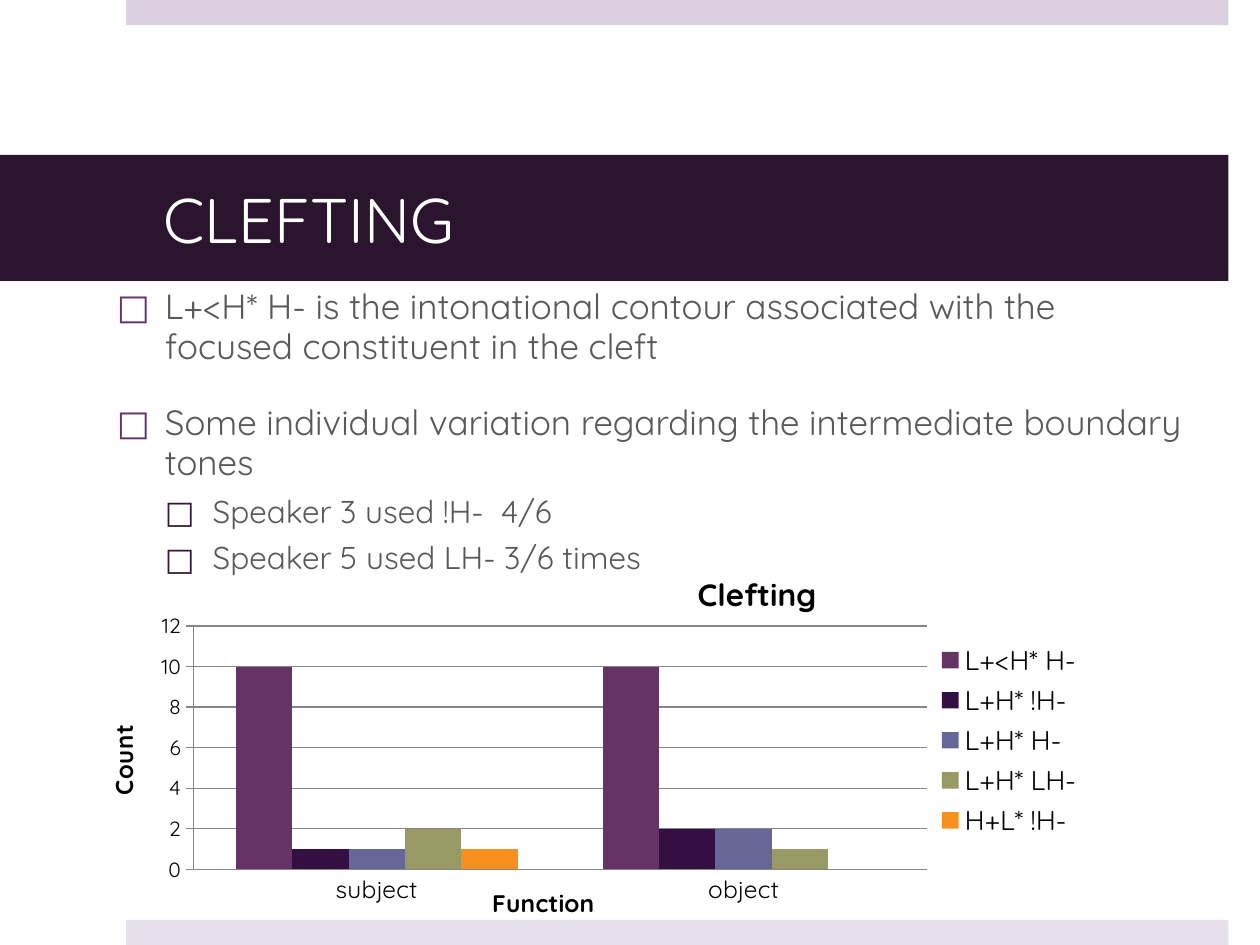
from lxml import etree
from pptx import Presentation
from pptx import util as u
from pptx.chart.data import CategoryChartData
from pptx.dml.color import RGBColor
from pptx.enum import chart as ch, shapes, text
from pptx.oxml.ns import qn

FONT = "Quicksand"
WIDTH, HEIGHT = 10, 7.5
BAND_LEFT, BAND_WIDTH, BAND_HEIGHT = 1, 8.75, 0.2

WHITE = RGBColor(0xFF, 0xFF, 0xFF)
BLACK = RGBColor(0, 0, 0)
GRAY = RGBColor(0x59, 0x59, 0x59)
GRID = RGBColor(0x86, 0x86, 0x86)
PLUM = RGBColor(0x2B, 0x14, 0x2D)
TOP_BAND = RGBColor(0xDB, 0xCF, 0xE0)
BOTTOM_BAND = RGBColor(0xE7, 0xDF, 0xEB)
BULLETS = ["663366", "331A33"]

# Text, level
POINTS = [
    ("L+<H* H- is the intonational contour associated with the "
     "focused constituent in the cleft", 0),
    ("Some individual variation regarding the intermediate boundary tones", 0),
    ("Speaker 3 used !H-  4/6", 1),
    ("Speaker 5 used LH- 3/6 times", 1),
]

# Contour, counts for subject and object, colour
CONTOURS = [
    ("L+<H* H-", (10, 10), RGBColor(0x66, 0x33, 0x66)),
    ("L+H* !H-", (1, 2), RGBColor(0x33, 0x0F, 0x42)),
    ("L+H* H-", (1, 2), RGBColor(0x66, 0x66, 0x99)),
    ("L+H* LH-", (2, 1), RGBColor(0x99, 0x99, 0x66)),
    ("H+L* !H-", (1, None), RGBColor(0xF7, 0x90, 0x1E)),
]


def inches(*lengths):
    return [u.Inches(n) for n in lengths]


def style_font(font, size, color, bold=False):
    font.name, font.size, font.bold = FONT, u.Pt(size), bold
    font.color.rgb = color


def add_run(p, words, size, color, bold=False):
    r = p.add_run()
    r.text = words
    style_font(r.font, size, color, bold)


def add_band(s, top, color):
    sp = s.shapes.add_shape(shapes.MSO_SHAPE.RECTANGLE,
                            *inches(BAND_LEFT, top, BAND_WIDTH, BAND_HEIGHT))
    sp.shadow.inherit = False
    sp.fill.solid()
    sp.fill.fore_color.rgb = color
    sp.line.fill.background()


def add_title(s, words):
    sp = s.shapes.title
    sp.left, sp.top, sp.width, sp.height = inches(0, 1.23, 9.75, 1)
    sp.fill.solid()
    sp.fill.fore_color.rgb = PLUM
    tf = sp.text_frame
    tf.margin_left, tf.margin_right = inches(1.3, 0.3)
    tf.vertical_anchor = text.MSO_ANCHOR.MIDDLE
    p = tf.paragraphs[0]
    p.alignment = text.PP_ALIGN.LEFT
    add_run(p, words, 36, WHITE)


def set_bullet(p, level):
    pPr = p._p.get_or_add_pPr()
    pPr.set("marL", str(u.Inches(0.38 * (level + 1))))
    pPr.set("indent", str(u.Inches(-0.38)))
    color = etree.SubElement(pPr, qn("a:buClr"))
    etree.SubElement(color, qn("a:srgbClr"), val=BULLETS[level])
    etree.SubElement(pPr, qn("a:buFont"), typeface=FONT)
    etree.SubElement(pPr, qn("a:buChar"), char="□")


def add_points(s):
    tf = s.shapes.add_textbox(*inches(0.83, 2.23, 8.71, 2.52)).text_frame
    tf.word_wrap = True
    for i, (words, level) in enumerate(POINTS):
        p = tf.paragraphs[0] if i == 0 else tf.add_paragraph()
        p.level = level
        p.line_spacing = 0.96
        p.space_before = u.Pt(0 if i == 0 else (20, 6)[level])
        set_bullet(p, level)
        add_run(p, words, (20, 18)[level], GRAY)


def place(element, x, y, w=None, h=None, inner=False):
    """Fix a chart part at shares of the chart's size."""
    for old in element.findall(qn("c:layout")):
        element.remove(old)
    layout = etree.Element(qn("c:layout"))
    manual = etree.SubElement(layout, qn("c:manualLayout"))
    values = [("xMode", "edge"), ("yMode", "edge"),
              ("x", x), ("y", y), ("w", w), ("h", h)]
    if inner:
        values.insert(0, ("layoutTarget", "inner"))
    for tag, value in values:
        if value is not None:
            etree.SubElement(manual, qn("c:" + tag), val=str(value))
    overlay = element.find(qn("c:overlay"))
    if overlay is None:
        element.insert(0, layout)
    else:
        overlay.addprevious(layout)


def set_chart_title(title, words, size, x, y):
    add_run(title.text_frame.paragraphs[0], words, size, BLACK, True)
    place(title._element, x, y)


def style_axis(axis, size, tick):
    style_font(axis.tick_labels.font, size, BLACK)
    axis.major_tick_mark = tick
    axis.minor_tick_mark = ch.XL_TICK_MARK.NONE
    axis.format.line.color.rgb = GRID


def add_count_chart(s):
    data = CategoryChartData()
    data.categories = ["subject", "object"]
    for name, counts, _ in CONTOURS:
        data.add_series(name, counts)
    chart = s.shapes.add_chart(ch.XL_CHART_TYPE.COLUMN_CLUSTERED,
                               *inches(0.63, 4.35, 8.53, 3), data).chart
    style_font(chart.font, 10, BLACK)
    place(chart._chartSpace.chart.plotArea, 0.106, 0.211, 0.683, 0.658, True)

    # Columns
    plot = chart.plots[0]
    plot.gap_width, plot.overlap, plot.vary_by_categories = 150, 0, False
    for series, (_, _, color) in zip(plot.series, CONTOURS):
        series.format.fill.solid()
        series.format.fill.fore_color.rgb = color

    # Axes
    style_axis(chart.category_axis, 14, ch.XL_TICK_MARK.NONE)
    counts = chart.value_axis
    style_axis(counts, 12, ch.XL_TICK_MARK.OUTSIDE)
    counts.minimum_scale, counts.maximum_scale, counts.major_unit = 0, 12, 2
    counts.has_major_gridlines = True
    counts.major_gridlines.format.line.color.rgb = GRID

    # Titles and legend
    chart.has_title = True
    set_chart_title(chart.chart_title, "Clefting", 18, 0.57, 0.05)
    set_chart_title(chart.category_axis.axis_title, "Function", 14, 0.38, 0.9)
    set_chart_title(counts.axis_title, "Count", 14, 0.02, 0.47)
    chart.has_legend = True
    chart.legend.position = ch.XL_LEGEND_POSITION.RIGHT
    chart.legend.include_in_layout = False
    style_font(chart.legend.font, 16, BLACK)
    place(chart.legend._element, 0.79, 0.24, 0.15, 0.56)


def main():
    prs = Presentation()
    prs.slide_width, prs.slide_height = inches(WIDTH, HEIGHT)
    s = prs.slides.add_slide(prs.slide_layouts[5])
    add_band(s, 0, TOP_BAND)
    add_band(s, HEIGHT - BAND_HEIGHT, BOTTOM_BAND)
    add_title(s, "CLEFTING")
    add_points(s)
    add_count_chart(s)
    prs.save("out.pptx")


if __name__ == "__main__":
    main()
